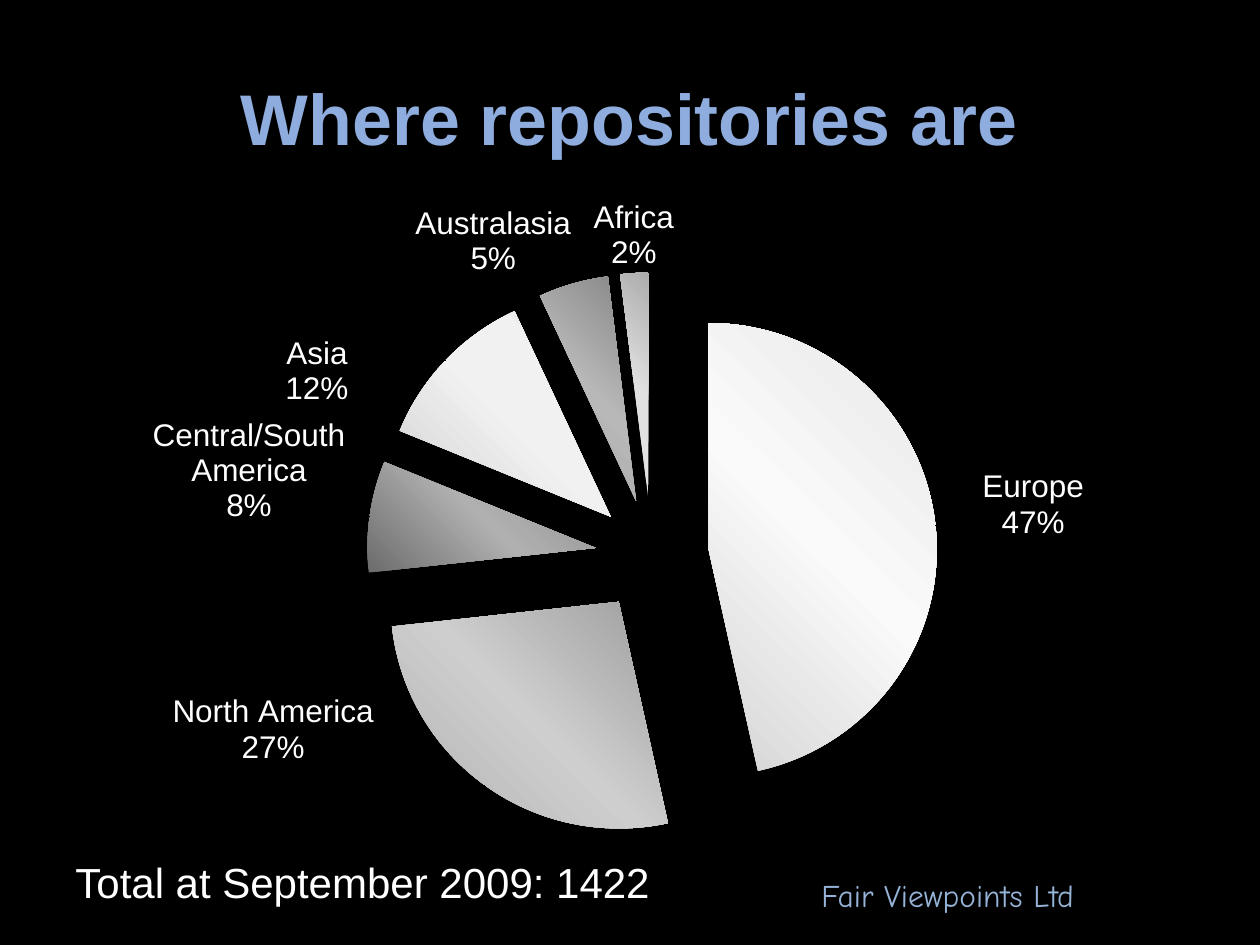
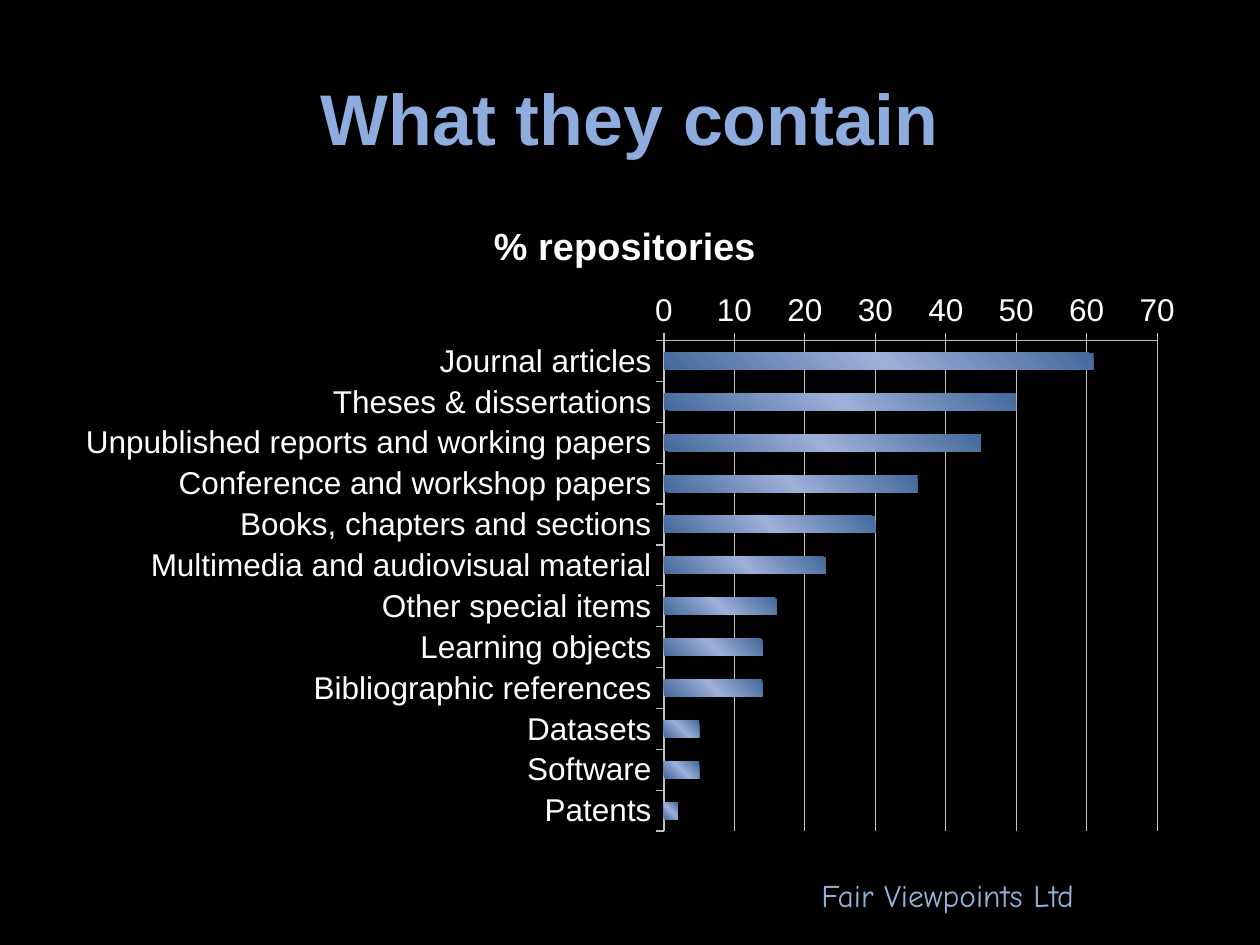
from lxml import etree
from pptx import Presentation
from pptx.chart.data import CategoryChartData
from pptx.dml.color import RGBColor
from pptx.enum.chart import XL_CHART_TYPE, XL_LABEL_POSITION, XL_TICK_MARK
from pptx.enum.text import MSO_ANCHOR, PP_ALIGN
from pptx.oxml import parse_xml
from pptx.oxml.ns import qn
from pptx.util import Inches, Pt

PIE, BAR = XL_CHART_TYPE.PIE, XL_CHART_TYPE.BAR_CLUSTERED
OUTSIDE_END = XL_LABEL_POSITION.OUTSIDE_END
TICK_OUTSIDE = XL_TICK_MARK.OUTSIDE
MIDDLE, CENTER = MSO_ANCHOR.MIDDLE, PP_ALIGN.CENTER

COLORS = {
    "background": "000000", "title": "8FACDE", "text": "FFFFFF",
    "footer": "95B3D7", "axis": "BFBFBF",
    "bar edge": "43699A", "bar middle": "9DB0D8",
}
FORMATS = {
    "title": {"name": "Arial", "size": Pt(41), "bold": True, "color": "title"},
    "chart": {"name": "Arial", "size": Pt(18), "color": "text"},
    "chart title": {"name": "Arial", "size": Pt(21.6), "bold": True, "color": "text"},
    "total": {"name": "Arial", "size": Pt(24), "color": "text"},
    "footer": {"name": "Comic Neue", "size": Pt(18), "color": "footer"},
}
WIDTH, HEIGHT = Inches(10), Inches(7.5)
COLUMNS, ROWS = 20, 30
FOOTER_TEXT = "Fair Viewpoints Ltd"
NAMESPACES = ('xmlns:a="http://schemas.openxmlformats.org/drawingml/2006/main" '
              'xmlns:c="http://schemas.openxmlformats.org/drawingml/2006/chart"')

# Region, share, gradient from bottom left to top right, label offset in percent
REGIONS = [
    ("Europe", 47, ("D4D4D4", "FAFAFA", "E6E6E6"), (3.5, 2.3)),
    ("North America", 27, ("B2B2B2", "CECECE", "9C9C9C"), (-9.5, -14.6)),
    ("Central/South America", 8, ("6C6C6C", "B0B0B0", "909090"), (-1.5, 1.2)),
    ("Asia", 12, ("D0D0D0", "F1F1F1", "ECECEC"), (-8.1, 7.6)),
    ("Australasia", 5, ("A4A4A4", "B8B8B8", "848484"), None),
    ("Africa", 2, ("E6E6E6", "E0E0E0", "ACACAC"), None),
]
CONTENTS = {
    "Journal articles": 61,
    "Theses & dissertations": 50,
    "Unpublished reports and working papers": 45,
    "Conference and workshop papers": 36,
    "Books, chapters and sections": 30,
    "Multimedia and audiovisual material": 23,
    "Other special items": 16,
    "Learning objects": 14,
    "Bibliographic references": 14,
    "Datasets": 5,
    "Software": 5,
    "Patents": 2,
}


def color(name):
    return RGBColor.from_string(COLORS[name])


def apply_format(font, name):
    for attribute, value in FORMATS[name].items():
        if attribute == "color":
            font.fill.solid()
            font.fill.fore_color.rgb = color(value)
        else:
            setattr(font, attribute, value)


def layout_xml(**values):
    """Manual chart layout; values are percentages of the chart's size."""
    target = '<c:layoutTarget val="inner"/>' if "w" in values else ""
    modes = "" if "dx" in values else '<c:xMode val="edge"/><c:yMode val="edge"/>'
    parts = "".join(f'<c:{key.strip("d")} val="{value / 100:.3f}"/>'
                    for key, value in values.items())
    return parse_xml(f"<c:layout {NAMESPACES}><c:manualLayout>{target}{modes}{parts}"
                     "</c:manualLayout></c:layout>")


def set_layout(parent, position, **values):
    for old_layout in parent.findall(qn("c:layout")):
        parent.remove(old_layout)
    parent.insert(position, layout_xml(**values))


def set_gradient(chart_format, hex_colors):
    """Three stops along the rising diagonal, with no outline."""
    chart_format.fill.background()
    chart_format.line.fill.background()
    stops = "".join(
        f'<a:gs pos="{position}"><a:srgbClr val="{value}"/></a:gs>'
        for position, value in zip((0, 50000, 100000), hex_colors))
    gradient = parse_xml(f"<a:gradFill {NAMESPACES}><a:gsLst>{stops}</a:gsLst>"
                         '<a:lin ang="18900000" scaled="0"/></a:gradFill>')
    properties = chart_format._element.get_or_add_spPr()
    properties.replace(properties.find(qn("a:noFill")), gradient)


def show_name_and_percent(labels):
    """Show category and percentage on two lines."""
    shown = ("showCatName", "showPercent")
    for tag in ("showLegendKey", "showVal", "showCatName", "showSerName", "showPercent"):
        labels.find(qn(f"c:{tag}")).set("val", str(int(tag in shown)))
    separator = etree.Element(qn("c:separator"))
    separator.text = "\n"
    last_flag = labels.find(qn("c:showBubbleSize"))
    if last_flag is None:
        last_flag = labels.find(qn("c:showPercent"))
    last_flag.addnext(separator)


class Deck:
    def __init__(self):
        self.presentation = Presentation()
        self.presentation.slide_width, self.presentation.slide_height = WIDTH, HEIGHT
        fill = self.presentation.slide_master.background.fill
        fill.solid()
        fill.fore_color.rgb = color("background")
        self.slide = None

    def box(self, column, row, columns, rows):
        """Turn grid cells into left, top, width and height."""
        return (int(WIDTH * column / COLUMNS), int(HEIGHT * row / ROWS),
                int(WIDTH * columns / COLUMNS), int(HEIGHT * rows / ROWS))

    def add_slide(self, title):
        self.slide = self.presentation.slides.add_slide(self.presentation.slide_layouts[5])
        shape = self.slide.shapes.title
        shape.left, shape.top, shape.width, shape.height = self.box(1, 1.2, 18, 5)
        shape.text_frame.text = title
        shape.text_frame.vertical_anchor = MIDDLE
        paragraph = shape.text_frame.paragraphs[0]
        paragraph.alignment = CENTER
        apply_format(paragraph.runs[0].font, "title")

    def add_text(self, text, style, *cells):
        shape = self.slide.shapes.add_textbox(*self.box(*cells))
        shape.text_frame.word_wrap = True
        shape.text_frame.text = text
        apply_format(shape.text_frame.paragraphs[0].runs[0].font, style)

    def add_footer(self):
        self.add_text(FOOTER_TEXT, "footer", 12.84, 27.6, 6.14, 1.6)

    def add_chart(self, kind, name, categories, values, rows, plot_layout):
        data = CategoryChartData()
        data.categories = categories
        data.add_series(name, values)
        chart = self.slide.shapes.add_chart(kind, *self.box(1, 6.2, 18, rows), data).chart
        chart.has_legend = False
        chart.has_title = False
        apply_format(chart.font, "chart")
        # Transparent chart and plot areas
        space = chart._chartSpace
        plot_area = space.find(".//" + qn("c:plotArea"))
        empty_fill = (f"<c:spPr {NAMESPACES}><a:noFill/>"
                      "<a:ln><a:noFill/></a:ln></c:spPr>")
        space.find(qn("c:txPr")).addprevious(parse_xml(empty_fill))
        plot_area.append(parse_xml(empty_fill))
        set_layout(plot_area, 0, **plot_layout)
        return chart

    def add_region_pie(self):
        names, shares, gradients, offsets = zip(*REGIONS)
        chart = self.add_chart(PIE, "Series 1", names, shares, 21.4,
                               {"x": 26.8, "y": 10.9, "w": 50.3, "h": 84.6})
        series = chart.plots[0].series[0]
        labels = series.data_labels
        labels.number_format, labels.number_format_is_linked = "0%", False
        labels.position = OUTSIDE_END
        show_name_and_percent(labels._element)
        for index, (gradient, offset) in enumerate(zip(gradients, offsets)):
            point = series.points[index]
            set_gradient(point.format, gradient)
            if offset:
                point.data_label.position = OUTSIDE_END
                label = labels._element.findall(qn("c:dLbl"))[-1]
                show_name_and_percent(label)
                set_layout(label, 1, dx=offset[0], dy=offset[1])
        explosion = etree.Element(qn("c:explosion"), val="25")
        series._element.find(qn("c:dPt")).addprevious(explosion)

    def add_content_bars(self):
        name = "% repositories"
        chart = self.add_chart(BAR, name, list(CONTENTS), list(CONTENTS.values()), 20.6,
                               {"x": 53, "y": 22.4, "w": 43.5, "h": 75.6})
        # Chart title
        chart.has_title = True
        chart.chart_title.text_frame.text = name
        apply_format(chart.chart_title.text_frame.paragraphs[0].runs[0].font, "chart title")
        set_layout(chart.chart_title._element, 1, x=37.4, y=3)
        # Bars
        plot = chart.plots[0]
        plot.vary_by_categories = False
        plot.gap_width = 140
        edge = COLORS["bar edge"]
        set_gradient(plot.series[0].format, (edge, COLORS["bar middle"], edge))
        # Axes
        value_axis, category_axis = chart.value_axis, chart.category_axis
        category_axis.reverse_order = True
        value_axis.minimum_scale, value_axis.maximum_scale = 0, 70
        value_axis.major_unit = 10
        value_axis.has_major_gridlines = True
        for axis in (value_axis, category_axis):
            axis.major_tick_mark = TICK_OUTSIDE
            apply_format(axis.tick_labels.font, "chart")
        for part in (value_axis, category_axis, value_axis.major_gridlines):
            part.format.line.color.rgb = color("axis")
            part.format.line.width = Pt(0.75)


def main():
    deck = Deck()

    # Repositories by region
    deck.add_slide("Where repositories are")
    deck.add_region_pie()
    deck.add_footer()
    deck.add_text("Total at September 2009: 1422", "total", 1, 27, 10.16, 2)

    # Repositories by content
    deck.add_slide("What they contain")
    deck.add_content_bars()
    deck.add_footer()

    deck.presentation.save("out.pptx")


if __name__ == "__main__":
    main()
